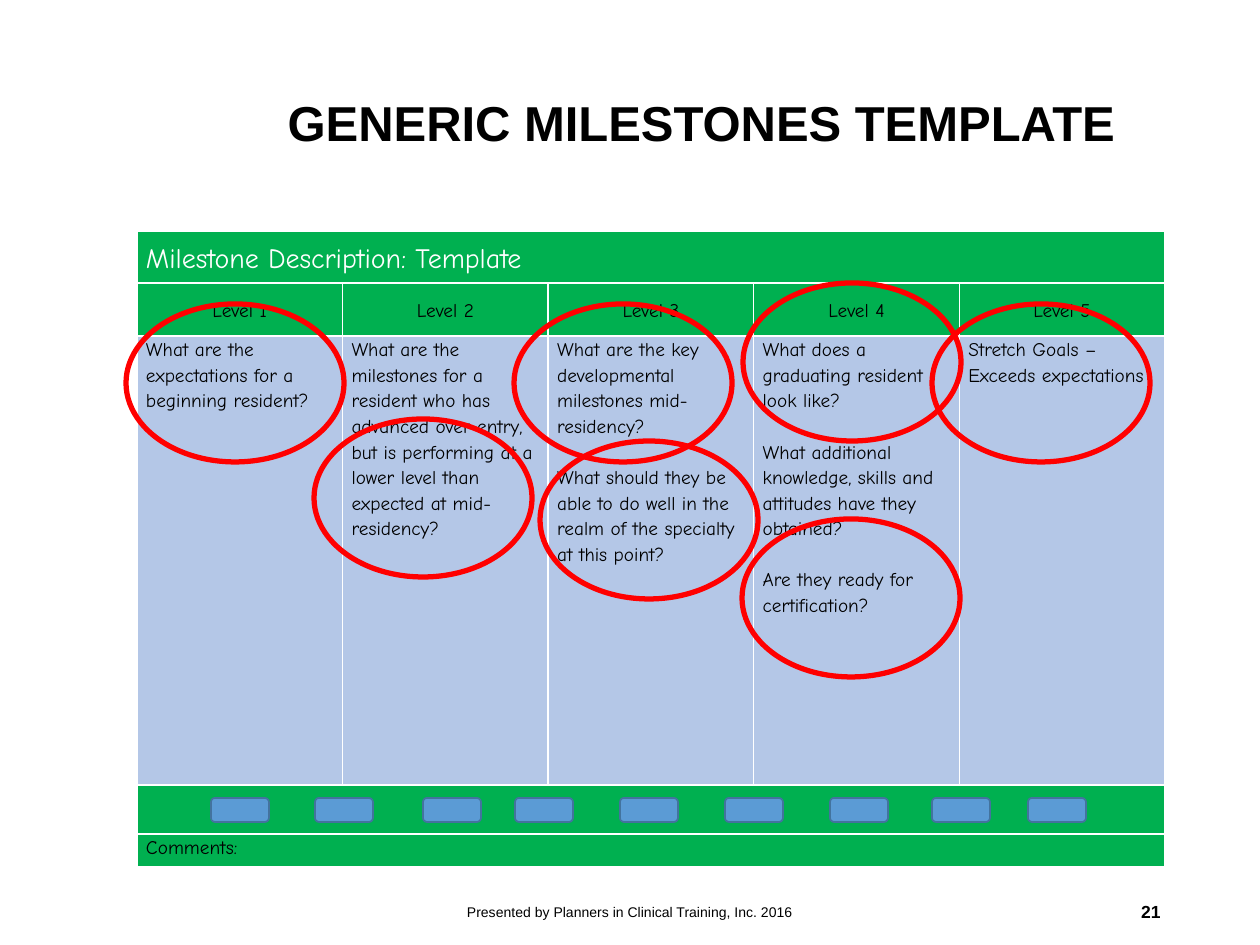
import lxml.etree
import pptx
import pptx.dml.color
import pptx.enum.shapes
import pptx.enum.text
import pptx.oxml.ns
import pptx.util

RGBColor = pptx.dml.color.RGBColor
Align = pptx.enum.text.PP_ALIGN
Anchor = pptx.enum.text.MSO_ANCHOR
Shape = pptx.enum.shapes.MSO_SHAPE
Pt = pptx.util.Pt

BLACK = RGBColor(0x00, 0x00, 0x00)
WHITE = RGBColor(0xFF, 0xFF, 0xFF)
GREEN = RGBColor(0x00, 0xB0, 0x50)
PALE_BLUE = RGBColor(0xB4, 0xC7, 0xE7)
BLUE = RGBColor(0x5B, 0x9B, 0xD5)
DARK_BLUE = RGBColor(0x43, 0x73, 0x9E)
RED = RGBColor(0xFF, 0x00, 0x00)

SANS = "Arial"
COMIC = "Comic Neue"
PX_PER_INCH = 126

ROW_HEIGHTS = [52, 53, 449, 49, 33]
LEVELS = [
    ["What are the expectations for a beginning resident?"],
    ["What are the milestones for a resident who has advanced over entry, "
     "but is performing at a lower level than expected at mid-residency?"],
    ["What are the key developmental milestones mid-residency?",
     "What should they be able to do well in the realm of the specialty at this point?"],
    ["What does a graduating resident look like?",
     "What additional knowledge, skills and attitudes have they obtained?",
     "Are they ready for certification?"],
    ["Stretch Goals – Exceeds expectations"],
]
# Offsets from the left and top of the table
PILL_LEFTS = [74, 178, 286, 378, 483, 588, 693, 795, 891]
RING_CORNERS = [(-11, 73), (177, 188), (377, 73), (403, 210), (606, 52), (605, 288), (795, 73)]


def px(length):
    return round(length * pptx.util.Inches(1) / PX_PER_INCH)


def style_text(frame, size, font, color=BLACK, bold=False, align=Align.LEFT,
               line_spacing=None, gap=0):
    for index, para in enumerate(frame.paragraphs):
        para.alignment = align
        para.line_spacing = line_spacing
        if index:
            para.space_before = Pt(gap)
        for span in para.runs:
            span.font.size = Pt(size)
            span.font.name = font
            span.font.bold = bold
            span.font.color.rgb = color


def add_title(page, left, top, width, height):
    title = page.shapes.title
    title.left, title.top, title.width, title.height = map(px, (left, top, width, height))
    title.text_frame.text = "GENERIC MILESTONES TEMPLATE"
    title.text_frame.vertical_anchor = Anchor.MIDDLE
    style_text(title.text_frame, 28, SANS, bold=True, line_spacing=0.9)


def add_footer(page, left, top, width, height, text, size, align, bold=False):
    box = page.shapes.add_textbox(*map(px, (left, top, width, height)))
    frame = box.text_frame
    frame.word_wrap = True
    frame.vertical_anchor = Anchor.MIDDLE
    frame.text = text
    style_text(frame, size, SANS, bold=bold, align=align)


def add_borders(cell, color, width):
    properties = cell._tc.get_or_add_tcPr()
    for side in ("lnL", "lnR", "lnT", "lnB"):
        line = lxml.etree.SubElement(properties, pptx.oxml.ns.qn("a:" + side), w=str(Pt(width)))
        fill = lxml.etree.SubElement(line, pptx.oxml.ns.qn("a:solidFill"))
        lxml.etree.SubElement(fill, pptx.oxml.ns.qn("a:srgbClr"), val=str(color))


def fill_cell(cell, text, size=11, color=BLACK, align=Align.LEFT, anchor=Anchor.TOP):
    cell.text_frame.text = text
    cell.vertical_anchor = anchor
    style_text(cell.text_frame, size, COMIC, color, align=align, line_spacing=1.15, gap=14.6)


def add_milestone_table(page, left, top, width):
    frame = page.shapes.add_table(len(ROW_HEIGHTS), len(LEVELS),
                                  *map(px, (left, top, width, sum(ROW_HEIGHTS))))
    table = frame.table
    table.first_row = table.horz_banding = False
    for column in table.columns:
        column.width = px(width / len(LEVELS))
    for index, (row, height) in enumerate(zip(table.rows, ROW_HEIGHTS)):
        row.height = px(height)
        for cell in row.cells:
            cell.margin_left = cell.margin_right = px(9)
            cell.margin_top = cell.margin_bottom = 0
            add_borders(cell, WHITE, 1)
            cell.fill.solid()
            cell.fill.fore_color.rgb = PALE_BLUE if index == 2 else GREEN

    # Full-width rows: heading, marker strip, comments
    for index in (0, 3, 4):
        table.cell(index, 0).merge(table.cell(index, len(LEVELS) - 1))
    fill_cell(table.cell(0, 0), "Milestone Description: Template", 16, WHITE, anchor=Anchor.MIDDLE)
    fill_cell(table.cell(4, 0), "Comments:")

    # One column for each level
    for index, questions in enumerate(LEVELS):
        fill_cell(table.cell(1, index), f"Level {index + 1}",
                  align=Align.CENTER, anchor=Anchor.MIDDLE)
        fill_cell(table.cell(2, index), "\n".join(questions))


def add_outlined(page, kind, left, top, width, height, line_color, line_width, fill=None):
    shape = page.shapes.add_shape(kind, *map(px, (left, top, width, height)))
    shape.shadow.inherit = False
    shape.line.color.rgb = line_color
    shape.line.width = Pt(line_width)
    if fill is None:
        shape.fill.background()
    else:
        shape.fill.solid()
        shape.fill.fore_color.rgb = fill


def add_markers(page, left, top):
    # Rating boxes in the marker strip
    for offset in PILL_LEFTS:
        add_outlined(page, Shape.ROUNDED_RECTANGLE, left + offset, top + 567, 58, 24,
                     DARK_BLUE, 1, BLUE)
    # Rings around the questions
    for x, y in RING_CORNERS:
        add_outlined(page, Shape.OVAL, left + x, top + y, 218, 158, RED, 3)


def main():
    deck = pptx.Presentation()
    deck.slide_width, deck.slide_height = px(1260), px(945)
    page = deck.slides.add_slide(deck.slide_layouts[5])
    add_title(page, 275, 34, 934, 183)
    add_footer(page, 417, 887, 426, 50,
               "Presented by Planners in Clinical Training, Inc. 2016", 8, Align.CENTER)
    add_footer(page, 890, 887, 283, 50, "21", 10, Align.RIGHT, bold=True)
    add_milestone_table(page, 137, 231, 1028)
    add_markers(page, 137, 231)
    deck.save("out.pptx")


if __name__ == "__main__":
    main()
